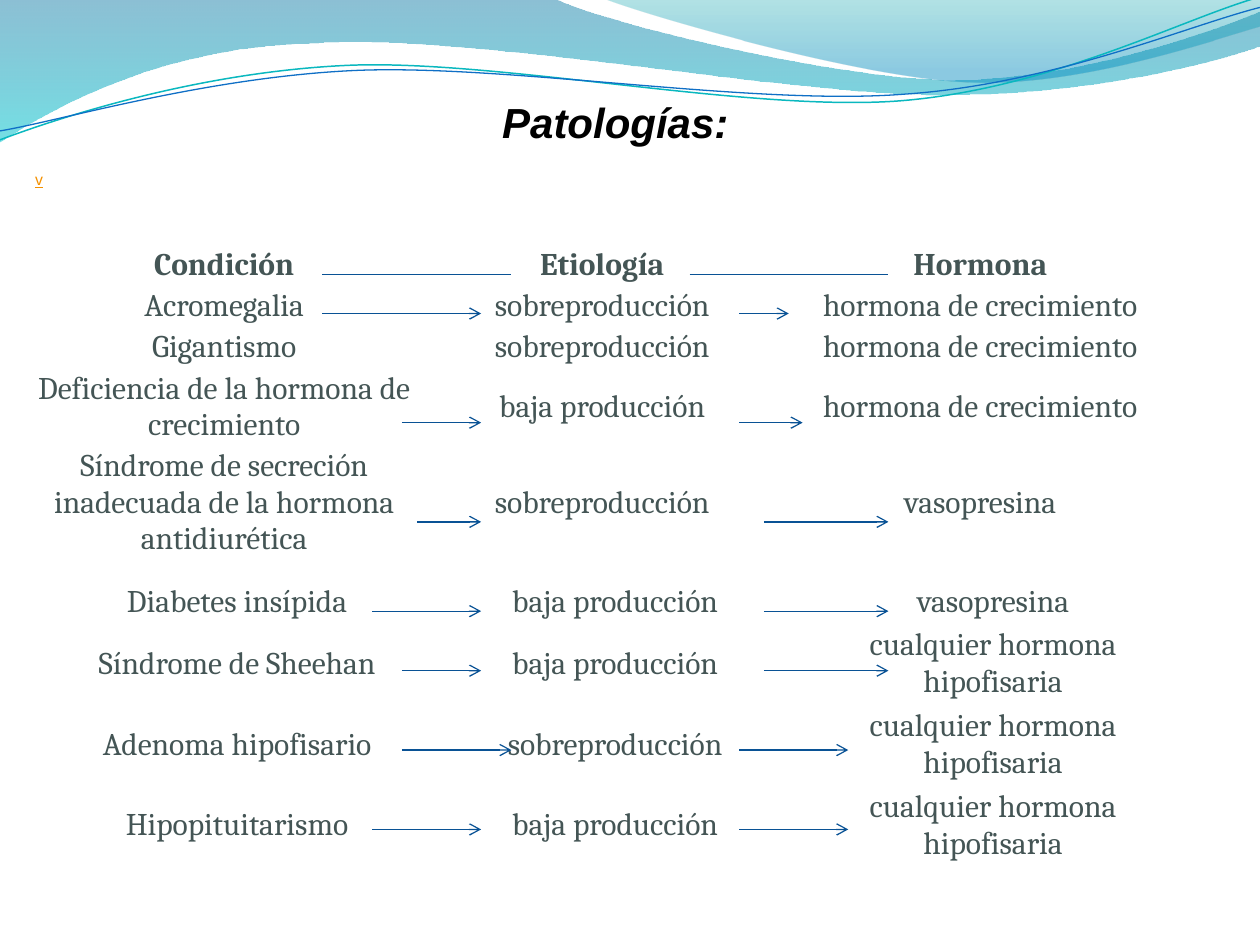
from dataclasses import dataclass

from lxml import etree
from pptx import Presentation
from pptx.dml.color import RGBColor
from pptx.enum.shapes import MSO_CONNECTOR as Connector
from pptx.enum.text import MSO_ANCHOR as Anchor, PP_ALIGN as Align
from pptx.oxml.ns import qn
from pptx.util import Cm, Pt


@dataclass(frozen=True)
class Theme:
    table_font: str = "Cambria"
    title_font: str = "Arial"
    table_size: int = 18
    title_size: int = 24
    mark_size: int = 9
    table_text: str = "445555"
    title: str = "000000"
    mark: str = "F49100"
    arrow: str = "095295"
    arrow_width: float = 0.75


theme = Theme()
NO_TABLE_STYLE = "{2D5ABB26-0587-4C30-8999-92F81FD0307C}"


def style(span, font, size, color, bold=False):
    span.font.name, span.font.size, span.font.bold = font, Pt(size), bold
    span.font.color.rgb = RGBColor.from_string(color)


def draw_outline(page, start, segments, close):
    """Two numbers make a straight side, six make a Bezier curve."""
    numbers = [number for segment in segments for number in segment]
    corners = [(Cm(x), Cm(y)) for x, y in zip(numbers[::2], numbers[1::2])]
    builder = page.shapes.build_freeform(Cm(start[0]), Cm(start[1]))
    builder.add_line_segments(corners, close=close)
    shape = builder.convert_to_shape()
    shape.shadow.inherit = False
    # Gather the three points of each curve into one cubic Bezier
    sides = iter(list(shape._element.spPr.iter(qn("a:lnTo"))))
    for segment in segments:
        side = next(sides)
        if len(segment) == 6:
            side.addprevious(curve := etree.Element(qn("a:cubicBezTo")))
            for part in (side, next(sides), next(sides)):
                curve.append(part[0])
                part.getparent().remove(part)
    return shape


deck = Presentation()
deck.slide_width, deck.slide_height = Cm(25.4), Cm(19.05)
page = deck.slides.add_slide(deck.slide_layouts[6])

# Filled waves: start, segments, then (position, colour, opacity) stops
waves = [
    ((0, 0),
     [(11.18, -0.03), (12.09, 0.43, 16.87, 1.6, 19.25, 1.6),
      (21.67, 1.6, 24.33, 0.66, 25.4, 0.23), (25.43, 0.91),
      (24.97, 1.12, 22.1, 1.93, 18.95, 1.91), (15.8, 1.91, 9.7, 0.71, 6.53, 0.86),
      (3.28, 0.91, 1.17, 2.11, -0.03, 2.87)],
     [(0, "0074A1", 45), (1, "00C6CF", 55)]),
    ((12.17, -0.03),
     [(12.93, 0.28, 17.32, 1.57, 19.53, 1.65),
      (21.74, 1.75, 24.41, 0.81, 25.4, 0.53), (25.4, 0)],
     [(0, "00A1A9", 30), (0.8, "008BBF", 45)]),
]
for start, segments, stops in waves:
    wave = draw_outline(page, start, segments, True)
    wave.line.fill.background()
    wave.fill.gradient()
    wave.fill.gradient_angle = 270
    for stop, (position, color, _) in zip(wave.fill.gradient_stops, stops):
        stop.position = position
        stop.color.rgb = RGBColor.from_string(color)
    for tint, (_, _, opacity) in zip(wave._element.spPr.iter(qn("a:srgbClr")), stops):
        etree.SubElement(tint, qn("a:alpha"), val=str(opacity * 1000))

# Thin wave lines, tilted together
ripples = [
    ((-0.05, 2.22),
     [(1.19, 1.82, 4.02, 1.04, 7.05, 1.05), (10.05, 1.07, 15.02, 2.37, 18.08, 2.29),
      (21.13, 2.2, 23.87, 0.91, 25.41, 0.55)], "0AB8BF", 0.85),
    ((-0.04, 2.04),
     [(1.16, 1.9, 4.18, 1.15, 7.2, 1.16), (10.25, 1.18, 15.13, 2.25, 18.18, 2.16),
      (21.21, 2.1, 23.93, 1.06, 25.45, 0.75)], "0F6FC6", 0.75),
]
for start, segments, color, width in ripples:
    ripple = draw_outline(page, start, segments, False)
    ripple.rotation = 357.3
    ripple.fill.background()
    ripple.line.color.rgb = RGBColor.from_string(color)
    ripple.line.width = Pt(width)

# Tables: left, top, row heights, rows
over, under = "sobreproducción", "baja producción"
growth, any_hormone = "hormona de crecimiento", "cualquier hormona hipofisaria"
tables = [
    (0.71, 4.93, [0.83, 0.83, 0.83, 1.57, 2.3], [
        ("Condición", "Etiología", "Hormona"),
        ("Acromegalia", over, growth),
        ("Gigantismo", over, growth),
        ("Deficiencia de la hormona de crecimiento", under, growth),
        ("Síndrome de secreción inadecuada de la hormona antidiurética", over,
         "vasopresina")]),
    (0.97, 11.73, [0.84, 1.63, 1.63, 1.63], [
        ("Diabetes insípida", under, "vasopresina"),
        ("Síndrome de Sheehan", under, any_hormone),
        ("Adenoma hipofisario", over, any_hormone),
        ("Hipopituitarismo", under, any_hormone)]),
]
for left, top, heights, rows in tables:
    table = page.shapes.add_table(len(rows), 3, Cm(left), Cm(top), Cm(22.86),
                                  Cm(sum(heights))).table
    table.first_row = table.horz_banding = False
    table._tbl.tblPr.find(qn("a:tableStyleId")).text = NO_TABLE_STYLE
    for row, height, texts in zip(table.rows, heights, rows):
        row.height = Cm(height)
        for cell, text in zip(row.cells, texts):
            cell.fill.background()
            cell.vertical_anchor = Anchor.MIDDLE
            cell.margin_left = cell.margin_right = Cm(0.04)
            cell.margin_top = cell.margin_bottom = Cm(0.04)
            cell.text = text
            para = cell.text_frame.paragraphs[0]
            para.alignment = Align.CENTER
            style(para.runs[0], theme.table_font, theme.table_size, theme.table_text,
                  texts[0] == "Condición")

# Title and the small mark under it
box = page.shapes.add_textbox(Cm(0.71), Cm(1.92), Cm(23.39), Cm(2.08))
frame = box.text_frame
frame.word_wrap, frame.vertical_anchor = True, Anchor.MIDDLE
frame.margin_left = frame.margin_right = frame.margin_top = 0
frame.margin_bottom = Cm(0.18)
frame.text = "Patologías:\nv"
title, mark = frame.paragraphs
title.alignment = Align.CENTER
style(title.runs[0], theme.title_font, theme.title_size, theme.title, True)
title.runs[0].font.italic = True
mark.space_before = Pt(13)
style(mark.runs[0], theme.title_font, theme.mark_size, theme.mark)
mark.runs[0].font.underline = True

# Links between columns: height, (from, to) on each side; the header has no heads
links = [
    (5.53, (6.5, 10.31), (13.9, 17.91)),
    (6.32, (6.5, 9.7), (14.9, 15.9)),
    (8.52, (8.1, 9.7), (14.9, 16.18)),
    (10.52, (8.41, 9.7), (15.4, 17.91)),
    (12.32, (7.5, 9.7), (15.4, 17.91)),
    (13.52, (8.1, 9.7), (15.4, 17.91)),
    (15.12, (8.1, 10.31), (14.9, 17.1)),
    (16.72, (7.5, 9.7), (14.9, 17.1)),
]
for index, (y, *spans) in enumerate(links):
    for begin, end in spans:
        link = page.shapes.add_connector(Connector.STRAIGHT, Cm(begin), Cm(y),
                                         Cm(end), Cm(y))
        link.line.color.rgb = RGBColor.from_string(theme.arrow)
        link.line.width = Pt(theme.arrow_width)
        if index:
            etree.SubElement(link.line._get_or_add_ln(), qn("a:tailEnd"), type="arrow")
        etree.SubElement(link._element.spPr, qn("a:effectLst"))

deck.save("out.pptx")
